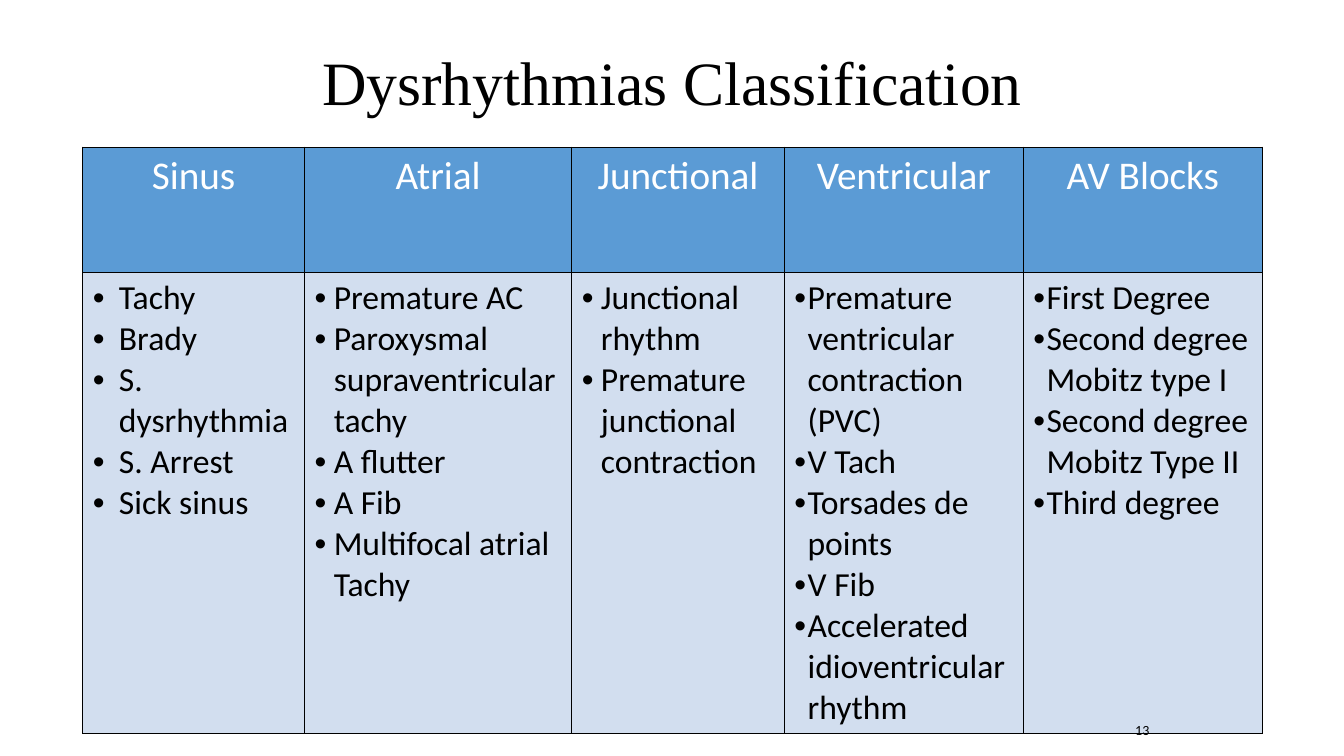
from lxml import etree
from pptx import Presentation
from pptx.dml.color import RGBColor
from pptx.enum.text import MSO_ANCHOR, PP_ALIGN
from pptx.oxml.ns import qn
from pptx.util import Inches, Pt

CENTER = PP_ALIGN.CENTER
MIDDLE, BOTTOM = MSO_ANCHOR.MIDDLE, MSO_ANCHOR.BOTTOM
BLACK = RGBColor(0x00, 0x00, 0x00)
WHITE = RGBColor(0xFF, 0xFF, 0xFF)
HEADER_BLUE = RGBColor(0x5B, 0x9B, 0xD5)
BODY_BLUE = RGBColor(0xD2, 0xDE, 0xEF)

TITLE = "Dysrhythmias Classification"
PAGE_NUMBER = "13"
# heading, column width, bullet indent, entries
CLASSES = [
    ("Sinus", 2.2, 0.26,
     ["Tachy", "Brady", "S. dysrhythmia", "S. Arrest", "Sick sinus"]),
    ("Atrial", 2.65, 0.19,
     ["Premature AC", "Paroxysmal supraventricular tachy", "A flutter",
      "A Fib", "Multifocal atrial Tachy"]),
    ("Junctional", 2.11, 0.19,
     ["Junctional rhythm", "Premature junctional contraction"]),
    ("Ventricular", 2.37, 0.13,
     ["Premature ventricular contraction (PVC)", "V Tach",
      "Torsades de points", "V Fib", "Accelerated idioventricular rhythm"]),
    ("AV Blocks", 2.37, 0.13,
     ["First Degree", "Second degree Mobitz type I",
      "Second degree Mobitz Type II", "Third degree"]),
]
TABLE_LEFT, TABLE_TOP = 0.82, 1.46
ROW_HEIGHTS = [1.24, 4.35]


def style_runs(para, size, color, font="Calibri"):
    for span in para.runs:
        span.font.size = Pt(size)
        span.font.name = font
        span.font.color.rgb = color


def add_label(page, text, left, top, width, height, anchor, size, font):
    box = page.shapes.add_textbox(
        Inches(left), Inches(top), Inches(width), Inches(height))
    frame = box.text_frame
    frame.word_wrap = True
    frame.vertical_anchor = anchor
    frame.text = text
    para = frame.paragraphs[0]
    para.alignment = CENTER
    style_runs(para, size, BLACK, font)
    return para


def add_bullet(para, indent):
    properties = para._p.get_or_add_pPr()
    properties.set("marL", str(Inches(indent)))
    properties.set("indent", str(-Inches(indent)))
    etree.SubElement(properties, qn("a:buFont"), typeface="Arial")
    etree.SubElement(properties, qn("a:buChar"), char="•")


def add_borders(cell):
    properties = cell._tc.get_or_add_tcPr()
    for position, side in enumerate(("lnL", "lnR", "lnT", "lnB")):
        line = etree.Element(qn("a:" + side), w=str(Pt(1)))
        fill = etree.SubElement(line, qn("a:solidFill"))
        etree.SubElement(fill, qn("a:srgbClr"), val=str(BLACK))
        properties.insert(position, line)


def fill_cell(cell, lines, background):
    cell.fill.solid()
    cell.fill.fore_color.rgb = background
    add_borders(cell)
    cell.text_frame.text = "\n".join(lines)
    return cell.text_frame.paragraphs


def add_classes(page):
    total_width = sum(width for _, width, _, _ in CLASSES)
    table = page.shapes.add_table(
        len(ROW_HEIGHTS), len(CLASSES), Inches(TABLE_LEFT), Inches(TABLE_TOP),
        Inches(total_width), Inches(sum(ROW_HEIGHTS))).table
    for row, height in zip(table.rows, ROW_HEIGHTS):
        row.height = Inches(height)
    for column, (heading, width, indent, entries) in enumerate(CLASSES):
        table.columns[column].width = Inches(width)
        for para in fill_cell(table.cell(0, column), [heading], HEADER_BLUE):
            para.alignment = CENTER
            style_runs(para, 28, WHITE)
            para.runs[0].font.bold = False
        for para in fill_cell(table.cell(1, column), entries, BODY_BLUE):
            add_bullet(para, indent)
            style_runs(para, 24, BLACK)


def main():
    deck = Presentation()
    deck.slide_width, deck.slide_height = Inches(13.33), Inches(7.5)
    page = deck.slides.add_slide(deck.slide_layouts[6])
    add_classes(page)
    title = add_label(page, TITLE, 0.92, 0.12, 11.5, 1.45, MIDDLE, 44,
                      "Times New Roman")
    title.line_spacing = 0.9
    add_label(page, PAGE_NUMBER, 11.08, 7.08, 0.5, 0.29, BOTTOM, 10, "Calibri")
    deck.save("out.pptx")


if __name__ == "__main__":
    main()
